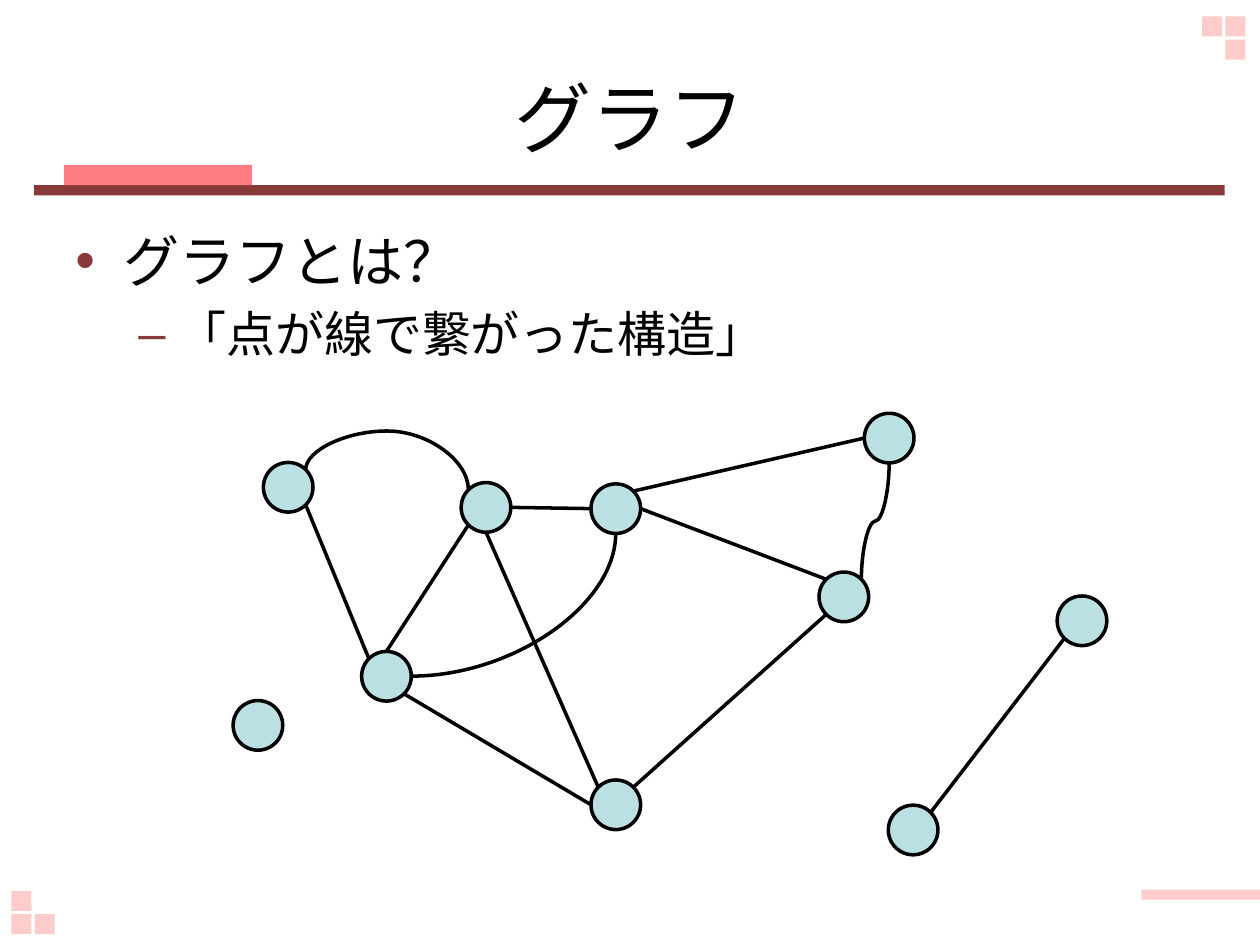
from dataclasses import dataclass
from math import cos, radians, sin

from lxml import etree
from pptx import Presentation
from pptx.dml.color import RGBColor
from pptx.enum.shapes import MSO_CONNECTOR, MSO_SHAPE
from pptx.enum.text import MSO_ANCHOR, PP_ALIGN
from pptx.oxml.ns import qn
from pptx.util import Inches, Pt

RECT, OVAL = MSO_SHAPE.RECTANGLE, MSO_SHAPE.OVAL
STRAIGHT, CURVE = MSO_CONNECTOR.STRAIGHT, MSO_CONNECTOR.CURVE
CENTER = PP_ALIGN.CENTER
MIDDLE, TOP_ANCHOR = MSO_ANCHOR.MIDDLE, MSO_ANCHOR.TOP
TITLE_ONLY = 5
TOP, TOP_LEFT, LEFT, BOTTOM_LEFT, BOTTOM, BOTTOM_RIGHT, RIGHT, TOP_RIGHT = range(8)


@dataclass(frozen=True)
class Theme:
    font: str = "Arial"
    text: str = "000000"
    rule: str = "883A3A"
    accent: str = "FF7C80"
    pale: str = "FFCCCC"
    node: str = "BBE0E3"
    title_size: int = 44
    body_sizes: tuple = (32, 28)
    line_width: int = 2


THEME = Theme()
WIDTH, HEIGHT = 10, 7.5
SQUARE, SQUARE_STEP = 0.16, 0.185
DIAMETER = 0.394

NODES = {
    "A": (2.09, 3.67), "B": (3.66, 3.83), "C": (4.69, 3.84),
    "D": (2.87, 5.17), "E": (6.5, 4.54), "F": (4.69, 6.19),
    "G": (6.86, 3.28), "H": (7.05, 6.39), "I": (8.39, 4.73),
    "J": (1.85, 5.56),
}
STRAIGHT_EDGES = [
    ("B", RIGHT, "C", LEFT),
    ("C", TOP_RIGHT, "G", LEFT),
    ("C", RIGHT, "E", TOP_LEFT),
    ("H", TOP_RIGHT, "I", BOTTOM_LEFT),
    ("B", BOTTOM, "F", TOP_LEFT),
    ("E", BOTTOM_LEFT, "F", TOP_RIGHT),
    ("D", BOTTOM_RIGHT, "F", LEFT),
    ("A", BOTTOM_RIGHT, "D", TOP_LEFT),
    ("D", TOP, "B", BOTTOM_LEFT),
]
CURVED_EDGES = [
    (("D", RIGHT, "C", BOTTOM), "curvedConnector2", 0, None),
    (("A", TOP_RIGHT, "B", TOP_LEFT), "curvedConnector3", 270, -1.921),
    (("G", BOTTOM, "E", TOP_RIGHT), "curvedConnector3", 90, None),
]
BULLETS = [
    ("グラフとは？", "•", 0.38, 0.38),
    ("「点が線で繋がった構造」", "–", 0.81, 0.31),
]


def rgb(color):
    return RGBColor.from_string(color)


def add_filled(s, kind, left, top, width, height, color):
    sp = s.shapes.add_shape(kind, Inches(left), Inches(top), Inches(width), Inches(height))
    sp.shadow.inherit = False
    sp.fill.solid()
    sp.fill.fore_color.rgb = rgb(color)
    sp.line.fill.background()
    return sp


def add_corner(s, left, top, cells):
    for col, row in cells:
        add_filled(s, RECT, left + col * SQUARE_STEP, top + row * SQUARE_STEP,
                   SQUARE, SQUARE, THEME.pale)


def add_decoration(s):
    add_filled(s, RECT, 0.27, 1.47, 9.45, 0.08, THEME.rule)
    add_filled(s, RECT, 0.51, 1.31, 1.49, 0.16, THEME.accent)
    add_filled(s, RECT, WIDTH - 0.94, 7.06, 0.94, 0.08, THEME.pale)
    add_corner(s, 9.54, 0.13, [(0, 0), (1, 0), (1, 1)])
    add_corner(s, 0.09, 7.07, [(0, 0), (0, 1), (1, 1)])


def format_runs(p, size):
    for r in p.runs:
        r.font.name = THEME.font
        r.font.size = Pt(size)
        r.font.color.rgb = rgb(THEME.text)


def add_title(s, text):
    sp = s.shapes.title
    sp.left, sp.top, sp.width, sp.height = (Inches(v) for v in (0.5, 0.3, 9, 1.25))
    tf = sp.text_frame
    tf.text = text
    tf.vertical_anchor = MIDDLE
    p = tf.paragraphs[0]
    p.alignment = CENTER
    format_runs(p, THEME.title_size)


def set_bullet(p, char, margin, hang):
    pPr = p._p.get_or_add_pPr()
    pPr.set("marL", str(Inches(margin)))
    pPr.set("indent", str(-Inches(hang)))
    color = etree.SubElement(pPr, qn("a:buClr"))
    etree.SubElement(color, qn("a:srgbClr"), val=THEME.rule)
    etree.SubElement(pPr, qn("a:buFont"), typeface=THEME.font)
    etree.SubElement(pPr, qn("a:buChar"), char=char)


def add_body(s):
    tf = s.shapes.add_textbox(Inches(0.5), Inches(1.75), Inches(9), Inches(4.95)).text_frame
    tf.word_wrap = True
    tf.vertical_anchor = TOP_ANCHOR
    for level, (text, char, margin, hang) in enumerate(BULLETS):
        p = tf.add_paragraph() if level else tf.paragraphs[0]
        size = THEME.body_sizes[level]
        p.text = text
        p.level = level
        p.space_before = Pt(size * 0.2)
        format_runs(p, size)
        set_bullet(p, char, margin, hang)


def set_outline(sp):
    sp.line.color.rgb = rgb(THEME.text)
    sp.line.width = Pt(THEME.line_width)


def add_node(s, left, top):
    sp = add_filled(s, OVAL, left, top, DIAMETER, DIAMETER, THEME.node)
    set_outline(sp)
    return sp


def site_point(sp, site):
    angle, radius = radians(45 * site), sp.width / 2
    return (sp.left + radius * (1 - sin(angle)), sp.top + radius * (1 - cos(angle)))


def unrotate(point, center, degrees):
    c, sn = cos(radians(degrees)), sin(radians(degrees))
    dx, dy = point[0] - center[0], point[1] - center[1]
    return round(center[0] + c * dx + sn * dy), round(center[1] - sn * dx + c * dy)


def add_edge(s, nodes, edge, kind=STRAIGHT, rotation=0):
    first, first_site, last, last_site = edge
    begin, end = site_point(nodes[first], first_site), site_point(nodes[last], last_site)
    center = [(a + b) / 2 for a, b in zip(begin, end)]
    line = s.shapes.add_connector(kind, *unrotate(begin, center, rotation),
                                  *unrotate(end, center, rotation))
    set_outline(line)
    etree.SubElement(line._element.spPr, qn("a:effectLst"))
    joints = line._element.find(".//" + qn("p:cNvCxnSpPr"))
    for tag, name, site in (("a:stCxn", first, first_site), ("a:endCxn", last, last_site)):
        etree.SubElement(joints, qn(tag), id=str(nodes[name].shape_id), idx=str(site))
    return line


def add_curve(s, nodes, edge, preset, rotation, bend):
    spPr = add_edge(s, nodes, edge, CURVE, rotation)._element.spPr
    if rotation:
        spPr.find(qn("a:xfrm")).set("rot", str(rotation * 60000))
    geometry = spPr.find(qn("a:prstGeom"))
    geometry.set("prst", preset)
    if bend is not None:
        etree.SubElement(geometry.find(qn("a:avLst")), qn("a:gd"),
                         name="adj1", fmla=f"val {round(bend * 100000)}")


def main():
    prs = Presentation()
    prs.slide_width, prs.slide_height = Inches(WIDTH), Inches(HEIGHT)
    s = prs.slides.add_slide(prs.slide_layouts[TITLE_ONLY])
    add_decoration(s)
    add_title(s, "グラフ")
    add_body(s)
    nodes = {name: add_node(s, *place) for name, place in NODES.items()}
    for edge in STRAIGHT_EDGES:
        add_edge(s, nodes, edge)
    for curve in CURVED_EDGES:
        add_curve(s, nodes, *curve)
    prs.save("out.pptx")


if __name__ == "__main__":
    main()
